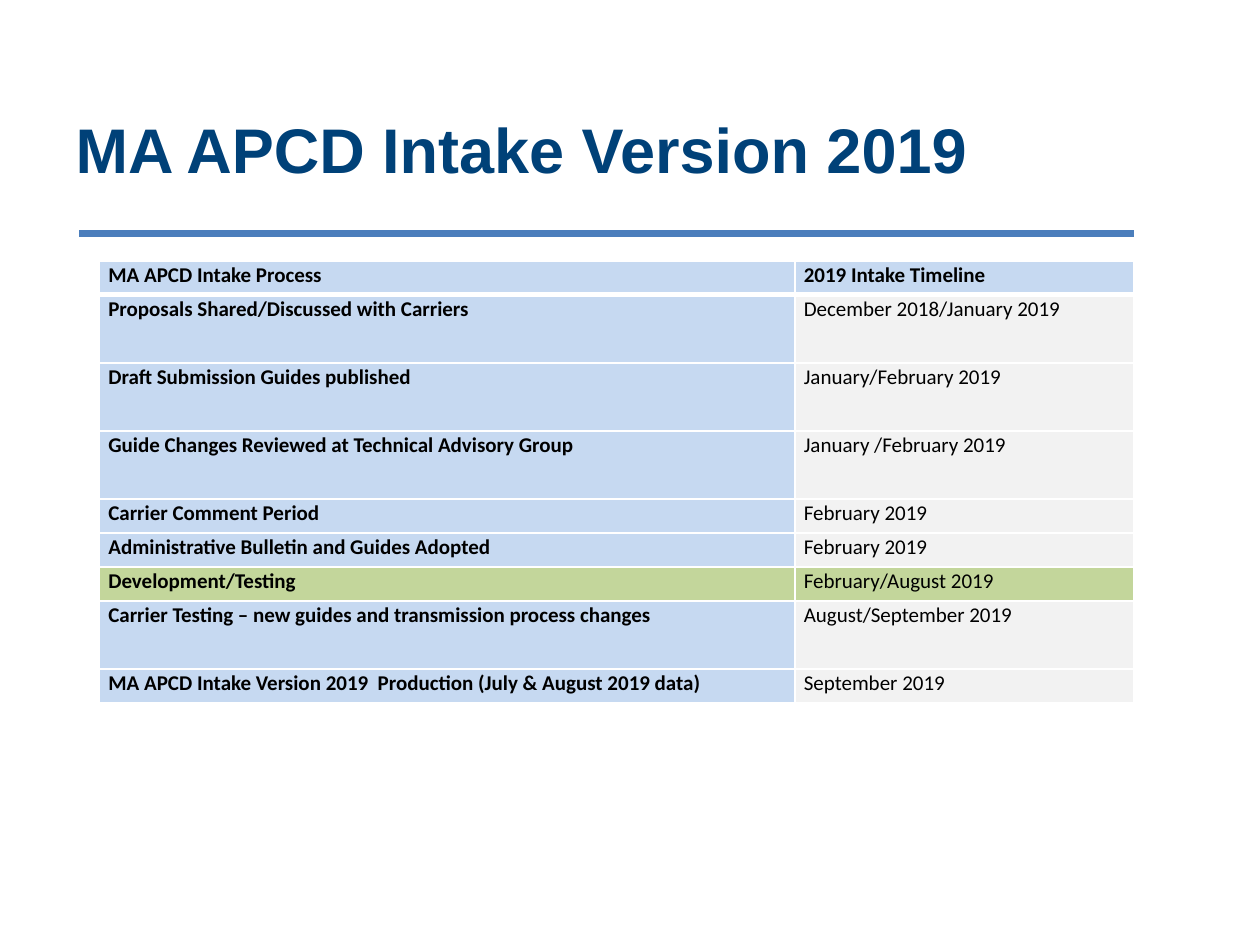
from lxml import etree
from pptx import Presentation
from pptx.dml.color import RGBColor
from pptx.enum.shapes import MSO_CONNECTOR
from pptx.enum.text import MSO_ANCHOR, PP_ALIGN
from pptx.oxml.ns import qn
from pptx.util import Inches, Pt

STRAIGHT = MSO_CONNECTOR.STRAIGHT
MIDDLE = MSO_ANCHOR.MIDDLE
TOP = MSO_ANCHOR.TOP
LEFT = PP_ALIGN.LEFT

NAVY = RGBColor(0x00, 0x41, 0x78)
RULE_BLUE = RGBColor(0x4B, 0x7E, 0xBC)
LIGHT_BLUE = RGBColor(0xC6, 0xD9, 0xF1)
GRAY = RGBColor(0xF2, 0xF2, 0xF2)
GREEN = RGBColor(0xC3, 0xD6, 0x9B)
WHITE = RGBColor(0xFF, 0xFF, 0xFF)
BLACK = RGBColor(0x00, 0x00, 0x00)

SINGLE, DOUBLE = 0.27, 0.54
ROWS = [
    ("MA APCD Intake Process", "2019 Intake Timeline", SINGLE),
    ("Proposals Shared/Discussed with Carriers", "December 2018/January 2019", DOUBLE),
    ("Draft Submission Guides published", "January/February 2019", DOUBLE),
    ("Guide Changes Reviewed at Technical Advisory Group", "January /February 2019", DOUBLE),
    ("Carrier Comment Period", "February 2019", SINGLE),
    ("Administrative Bulletin and Guides Adopted", "February 2019", SINGLE),
    ("Development/Testing", "February/August 2019", SINGLE),
    ("Carrier Testing – new guides and transmission process changes",
     "August/September 2019", DOUBLE),
    ("MA APCD Intake Version 2019  Production (July & August 2019 data)",
     "September 2019", SINGLE),
]
HEADER_ROW, HIGHLIGHT_ROW = 0, 6


def add_border(cell, side, width):
    ln = etree.SubElement(cell._tc.get_or_add_tcPr(), qn("a:ln" + side), w=str(Pt(width)))
    fill = etree.SubElement(ln, qn("a:solidFill"))
    etree.SubElement(fill, qn("a:srgbClr"), val=str(WHITE))


def add_run(p, text, font, size, color, bold):
    r = p.add_run()
    r.text = text
    r.font.name = font
    r.font.size = Pt(size)
    r.font.color.rgb = color
    r.font.bold = bold


prs = Presentation()
prs.slide_width, prs.slide_height = Inches(10), Inches(7.5)
s = prs.slides.add_slide(prs.slide_layouts[5])

# Title
title = s.shapes.title
title.left, title.top = Inches(0.5), Inches(0.62)
title.width, title.height = Inches(8.5), Inches(1.11)
tf = title.text_frame
tf.vertical_anchor = MIDDLE
p = tf.paragraphs[0]
p.alignment = LEFT
add_run(p, "MA APCD Intake Version 2019", "Arial", 36, NAVY, True)

# Rule under the title
rule = s.shapes.add_connector(STRAIGHT, Inches(0.63), Inches(1.85), Inches(9), Inches(1.85))
rule.line.color.rgb = RULE_BLUE
rule.line.width = Pt(4)
etree.SubElement(rule._element.spPr, qn("a:effectLst"))

# Timeline table
total = sum(height for _, _, height in ROWS)
table = s.shapes.add_table(len(ROWS), 2, Inches(0.79), Inches(2.07),
                           Inches(8.21), Inches(total)).table
table.columns[0].width = Inches(5.52)
table.columns[1].width = Inches(2.69)

for i, (step, period, height) in enumerate(ROWS):
    table.rows[i].height = Inches(height)
    for j, text in enumerate((step, period)):
        cell = table.cell(i, j)
        cell.margin_left = cell.margin_right = Inches(0.07)
        cell.margin_top = cell.margin_bottom = 0
        cell.vertical_anchor = TOP

        # The line below the header is thicker
        for side in "LRTB":
            below_header = (i, side) in ((HEADER_ROW, "B"), (HEADER_ROW + 1, "T"))
            add_border(cell, side, 3 if below_header else 1)

        cell.fill.solid()
        if i == HIGHLIGHT_ROW:
            cell.fill.fore_color.rgb = GREEN
        elif i == HEADER_ROW or j == 0:
            cell.fill.fore_color.rgb = LIGHT_BLUE
        else:
            cell.fill.fore_color.rgb = GRAY

        p = cell.text_frame.paragraphs[0]
        p.line_spacing = 1.07
        add_run(p, text, "Calibri", 12, BLACK, i == HEADER_ROW or j == 0)

prs.save("out.pptx")
